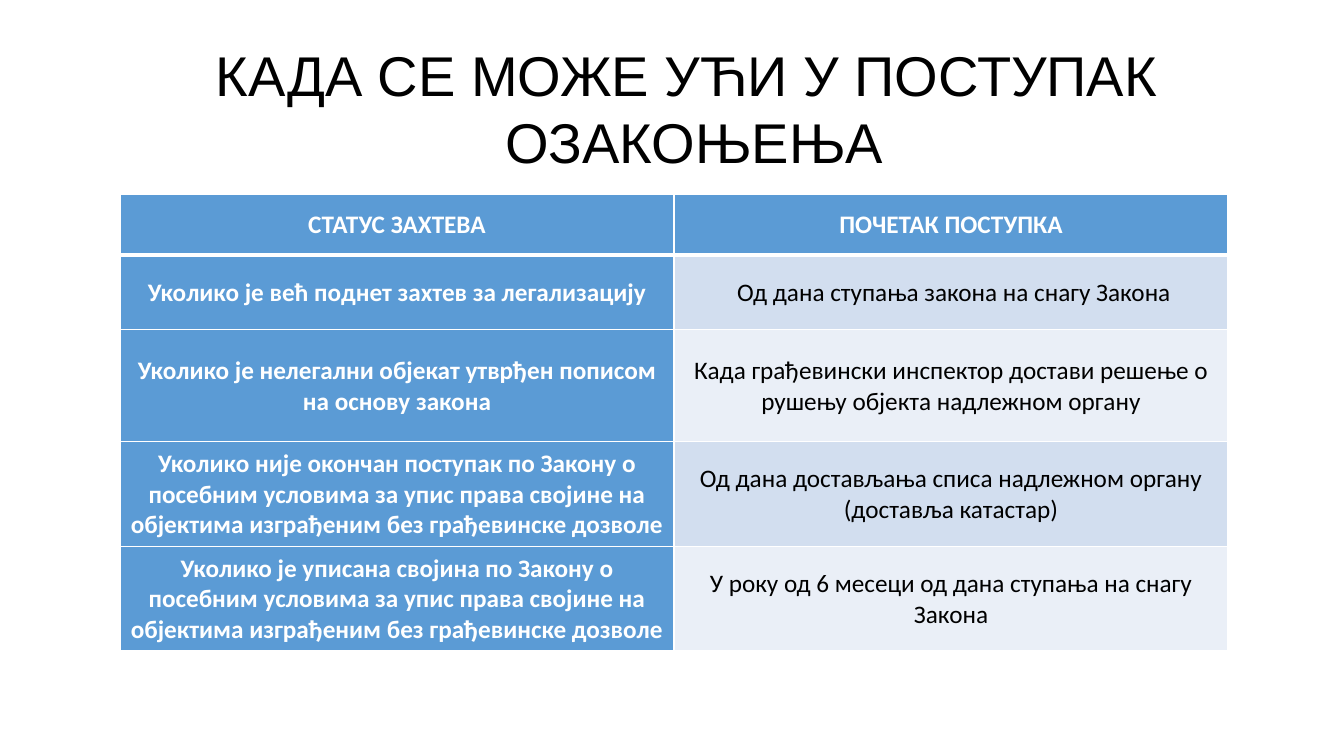
from dataclasses import dataclass

from lxml.etree import SubElement
from pptx import Presentation
from pptx.dml.color import RGBColor
from pptx.enum.text import MSO_ANCHOR, MSO_AUTO_SIZE, PP_ALIGN
from pptx.oxml.ns import qn
from pptx.util import Inches, Pt


@dataclass(frozen=True)
class Theme:
    """Colours, fonts and type sizes of the slide."""
    black: str = "000000"
    white: str = "FFFFFF"
    accent: str = "5B9BD5"
    bands: tuple = ("D2DEEF", "EAEFF7")
    title_font: str = "Arial"
    body_font: str = "Calibri"
    title_size: int = 40
    body_size: int = 18


THEME = Theme()

TITLE_LINES = ("КАДА СЕ МОЖЕ УЋИ У ПОСТУПАК ", "ОЗАКОЊЕЊА")
PROCEDURES = (
    ("СТАТУС ЗАХТЕВА", "ПОЧЕТАК ПОСТУПКА"),
    ("Уколико је већ поднет захтев за легализацију",
     " Од дана ступања закона на снагу Закона"),
    ("Уколико је нелегални објекат утврђен пописом на основу закона",
     "Када грађевински инспектор достави решење о рушењу објекта надлежном органу"),
    ("Уколико није окончан поступак по Закону о посебним условима за упис права "
     "својине на објектима изграђеним без грађевинске дозволе",
     "Од дана достављања списа надлежном органу (доставља катастар)"),
    ("Уколико је уписана својина по Закону о посебним условима за упис права "
     "својине на објектима изграђеним без грађевинске дозволе",
     "У року од 6 месеци од дана ступања на снагу Закона"),
)
ROW_HEIGHTS = (0.6, 0.74, 1.11, 1.04, 1.04)


def write(frame, *lines, font, size, color, bold=False):
    """Write centred lines into a text frame, one paragraph each."""
    for index, line in enumerate(lines):
        paragraph = frame.add_paragraph() if index else frame.paragraphs[0]
        paragraph.alignment = PP_ALIGN.CENTER
        run = paragraph.add_run()
        run.text = line
        run.font.name = font
        run.font.size = Pt(size)
        run.font.bold = bold
        run.font.color.rgb = RGBColor.from_string(color)


def set_borders(cell, widths):
    """Draw white cell borders with widths given by side in points."""
    properties = cell._tc.get_or_add_tcPr()
    for side in "LRTB":
        line = SubElement(properties, qn(f"a:ln{side}"), w=str(Pt(widths[side])))
        fill = SubElement(line, qn("a:solidFill"))
        SubElement(fill, qn("a:srgbClr"), val=THEME.white)


def add_title(slide, left, top, width, height):
    """Place the two-line title in the given box."""
    title = slide.shapes.add_textbox(
        Inches(left), Inches(top), Inches(width), Inches(height)).text_frame
    title.word_wrap = False
    title.auto_size = MSO_AUTO_SIZE.SHAPE_TO_FIT_TEXT
    write(title, *TITLE_LINES, font=THEME.title_font, size=THEME.title_size,
          color=THEME.black)


def add_procedures(slide, left, top, width, height):
    """Place the table of request status and procedure start in the given box."""
    table = slide.shapes.add_table(
        len(PROCEDURES), 2, Inches(left), Inches(top),
        Inches(width), Inches(height)).table
    for row_index, texts in enumerate(PROCEDURES):
        table.rows[row_index].height = Inches(ROW_HEIGHTS[row_index])
        for column_index, text in enumerate(texts):
            cell = table.cell(row_index, column_index)
            strong = row_index == 0 or column_index == 0
            cell.margin_left = cell.margin_right = Inches(0.06)
            cell.margin_top, cell.margin_bottom = Inches(0.01), Inches(0)
            cell.vertical_anchor = MSO_ANCHOR.MIDDLE
            set_borders(cell, {"L": 1, "R": 1, "T": 3 if row_index == 1 else 1,
                               "B": 3 if row_index == 0 else 1})
            cell.fill.solid()
            cell.fill.fore_color.rgb = RGBColor.from_string(
                THEME.accent if strong else THEME.bands[(row_index - 1) % 2])
            write(cell.text_frame, text, font=THEME.body_font,
                  size=THEME.body_size, bold=strong,
                  color=THEME.white if strong else THEME.black)


def main():
    """Build and save the slide."""
    deck = Presentation()
    deck.slide_width, deck.slide_height = Inches(13.33), Inches(7.5)
    slide = deck.slides.add_slide(deck.slide_layouts[6])
    add_procedures(slide, 1.19, 1.93, 10.99, sum(ROW_HEIGHTS))
    add_title(slide, 1.99, 0.35, 9.79, 1.45)
    deck.save("out.pptx")


if __name__ == "__main__":
    main()
